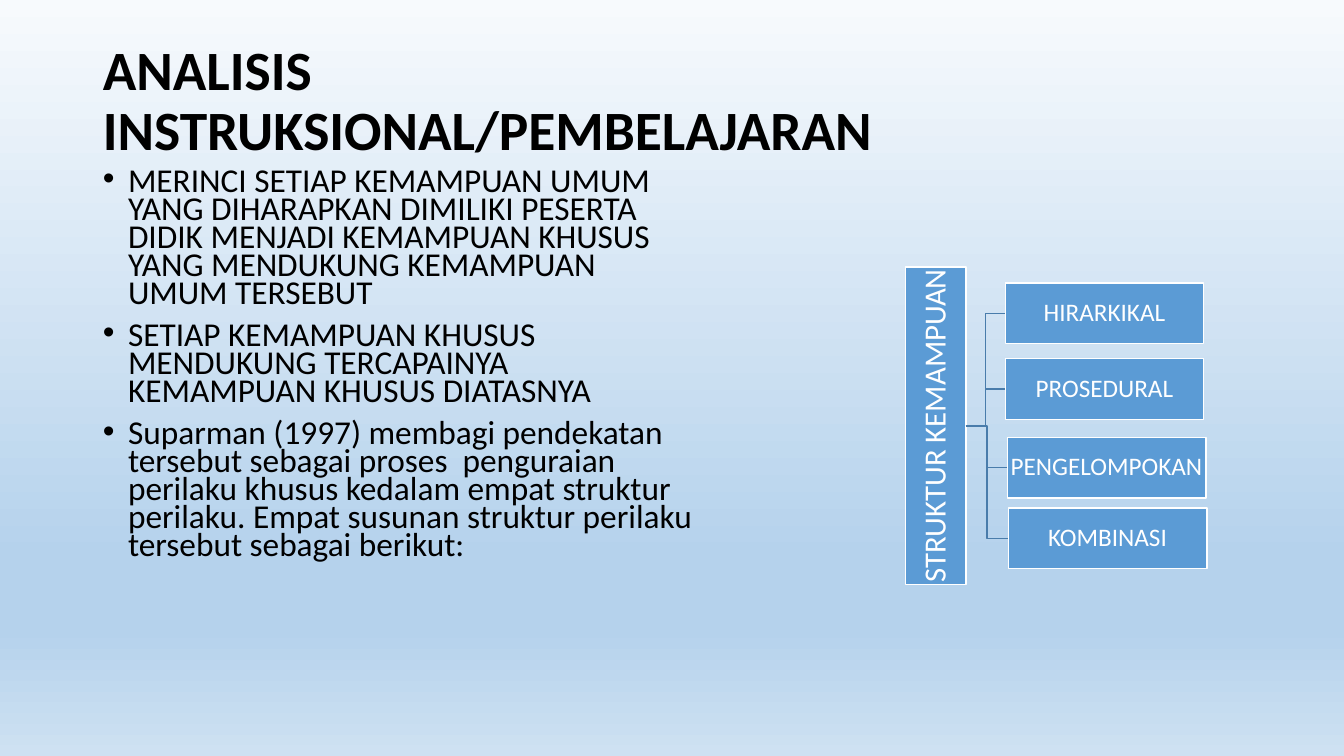
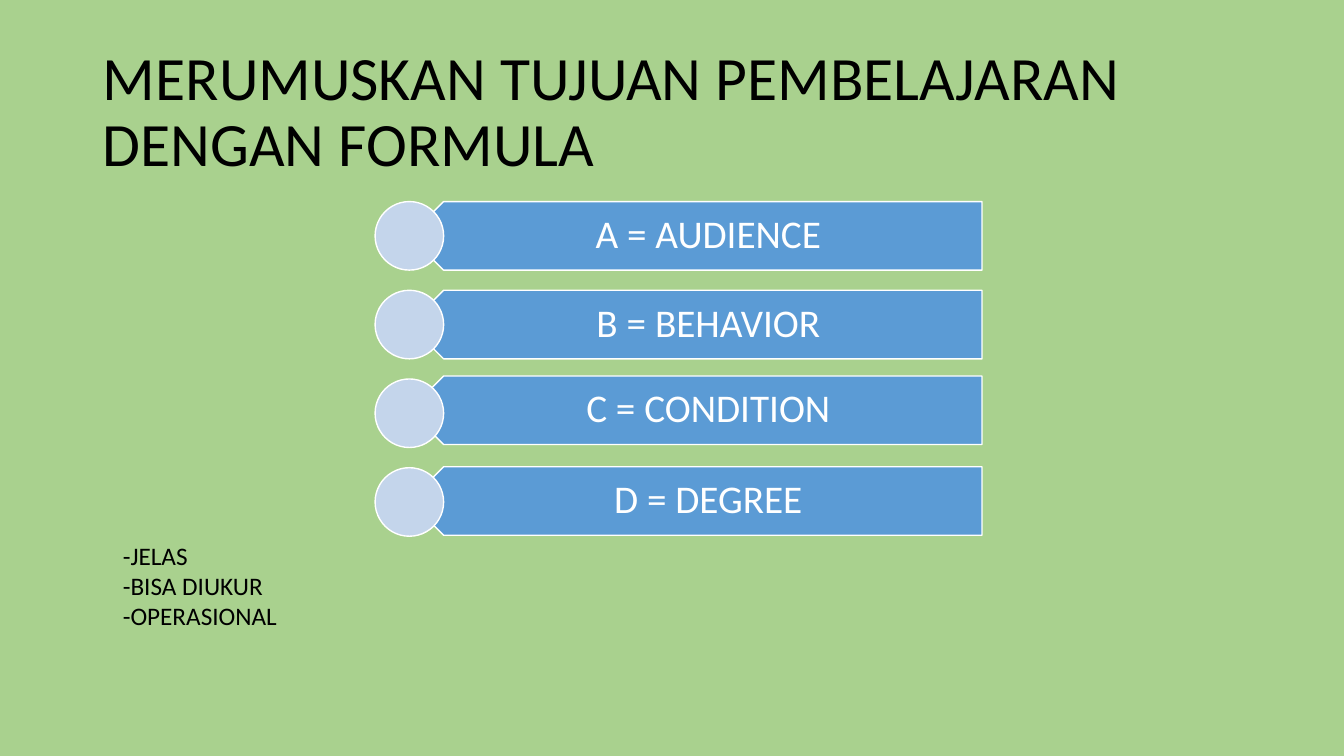
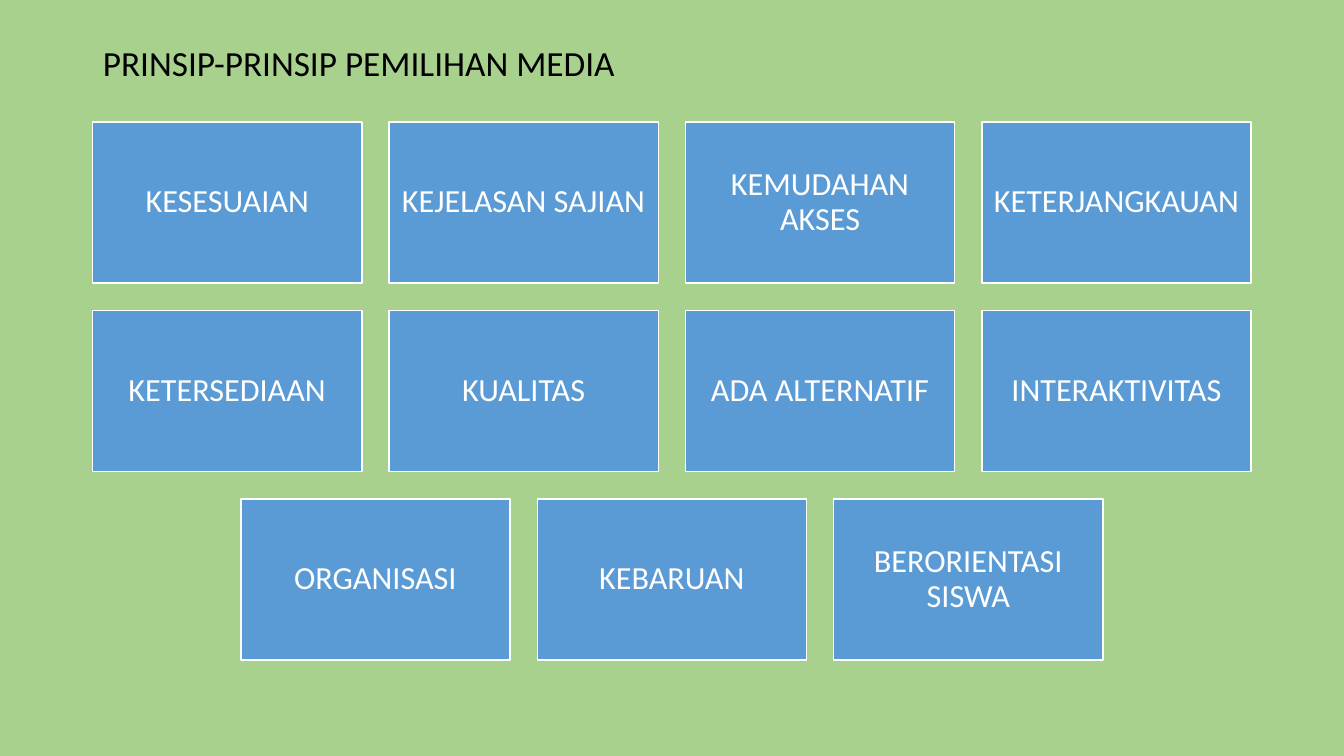
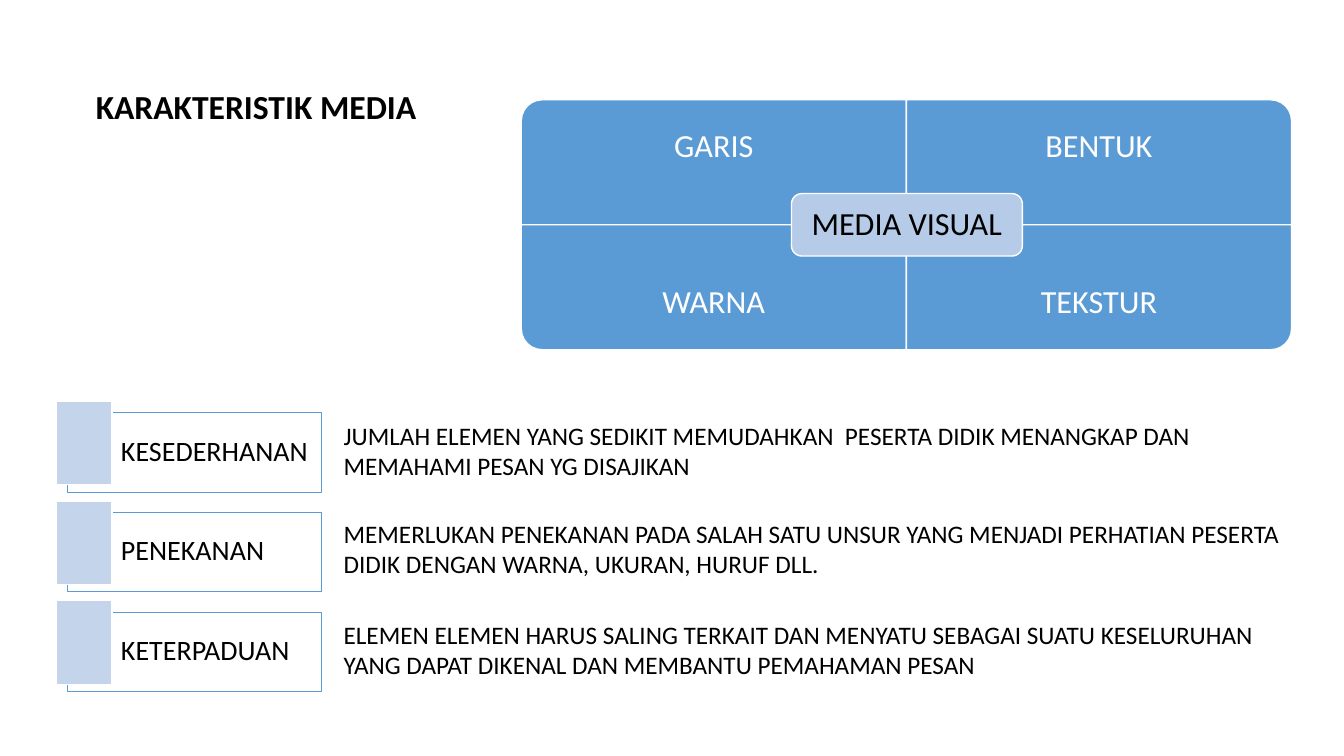
from copy import deepcopy

from lxml.etree import SubElement
from pptx import Presentation
from pptx.dml.color import RGBColor
from pptx.enum.shapes import MSO_CONNECTOR as CONNECTOR, MSO_SHAPE as SHAPE
from pptx.enum.text import MSO_ANCHOR as ANCHOR, MSO_AUTO_SIZE as AUTO_SIZE, PP_ALIGN as ALIGN
from pptx.oxml.ns import qn
from pptx.util import Inches, Pt

FONT = "Calibri"
BLACK = RGBColor(0x00, 0x00, 0x00)
WHITE = RGBColor(0xFF, 0xFF, 0xFF)
BLUE = RGBColor(0x5B, 0x9B, 0xD5)
PALE_BLUE = RGBColor(0xC4, 0xD5, 0xEB)
CENTER_BLUE = RGBColor(0xB5, 0xCB, 0xE7)
BRANCH_BLUE = RGBColor(0x49, 0x7C, 0xAB)
GREEN = RGBColor(0xA9, 0xD1, 0x8E)
SKY_STOPS = [
    (0, RGBColor(0xF7, 0xFA, 0xFD)),
    (0.74, RGBColor(0xB5, 0xD2, 0xEC)),
    (0.83, RGBColor(0xB5, 0xD2, 0xEC)),
    (1, RGBColor(0xCE, 0xE1, 0xF2)),
]
SLIDE_WIDTH, SLIDE_HEIGHT = 13.33, 7.5
CONTENT_LAYOUT, TITLE_LAYOUT = 1, 5


def place(item, left, top, width, height):
    item.left, item.top = Inches(left), Inches(top)
    item.width, item.height = Inches(width), Inches(height)


def format_text(frame, size, color, align=ALIGN.LEFT, spacing=0.9, bold=False):
    for paragraph in frame.paragraphs:
        paragraph.alignment = align
        paragraph.line_spacing = spacing
        for run in paragraph.runs:
            run.font.name = FONT
            run.font.size = Pt(size)
            run.font.bold = bold
            run.font.color.rgb = color


def set_insets(frame, left, top, right, bottom):
    frame.margin_left, frame.margin_top = Inches(left), Inches(top)
    frame.margin_right, frame.margin_bottom = Inches(right), Inches(bottom)


def new_slide(deck, layout, title, box, size, background, bold=False):
    slide = deck.slides.add_slide(deck.slide_layouts[layout])
    if background is None:
        paint_sky(slide)
    else:
        slide.background.fill.solid()
        slide.background.fill.fore_color.rgb = background
    heading = slide.shapes.title
    place(heading, *box)
    frame = heading.text_frame
    frame.text = title
    frame.auto_size = AUTO_SIZE.NONE
    frame.vertical_anchor = ANCHOR.MIDDLE
    format_text(frame, size, BLACK, bold=bold)
    return slide


def paint_sky(slide):
    fill = slide.background.fill
    fill.gradient()
    fill.gradient_angle = 270
    stops = slide.element.find(".//" + qn("a:gsLst"))
    while len(stops) < len(SKY_STOPS):
        stops.append(deepcopy(stops[0]))
    for stop, (position, color) in zip(fill.gradient_stops, SKY_STOPS):
        stop.position = position
        stop.color.rgb = color


def add_bullets(slide, items, box, size):
    body = slide.placeholders[1]
    place(body, *box)
    frame = body.text_frame
    frame.text = "\n".join(items)
    frame.auto_size = AUTO_SIZE.NONE
    format_text(frame, size, BLACK, spacing=0.7)
    for paragraph in frame.paragraphs:
        paragraph.space_before = Pt(10)
        properties = paragraph._p.get_or_add_pPr()
        properties.set("marL", str(Inches(0.25)))
        properties.set("indent", str(Inches(-0.25)))


def add_block(slide, kind, box, fill=BLUE, line=WHITE, weight=1, text="", size=23,
              color=WHITE, align=ALIGN.CENTER, insets=(0.1, 0.1, 0.1, 0.1)):
    block = slide.shapes.add_shape(kind, *map(Inches, box))
    block.shadow.inherit = False
    block.fill.solid()
    block.fill.fore_color.rgb = fill
    block.line.color.rgb = line
    block.line.width = Pt(weight)
    if text:
        frame = block.text_frame
        frame.text = text
        frame.word_wrap = True
        frame.vertical_anchor = ANCHOR.MIDDLE
        set_insets(frame, *insets)
        format_text(frame, size, color, align)
    return block


def mirror(block, *axes):
    for axis in axes:
        block.element.spPr.find(qn("a:xfrm")).set(axis, "1")


def add_label(slide, text, box, size, color):
    label = slide.shapes.add_textbox(*map(Inches, box))
    frame = label.text_frame
    frame.text = text
    frame.word_wrap = True
    frame.vertical_anchor = ANCHOR.MIDDLE
    format_text(frame, size, color, ALIGN.CENTER)


def add_lines(slide, lines, box):
    note = slide.shapes.add_textbox(*map(Inches, box))
    frame = note.text_frame
    frame.text = "\n".join(lines)
    frame.word_wrap = False
    frame.auto_size = AUTO_SIZE.SHAPE_TO_FIT_TEXT
    format_text(frame, 18, BLACK, spacing=1)


def add_branch(slide, root, leaf):
    branch = slide.shapes.add_connector(CONNECTOR.ELBOW, 0, 0, 0, 0)
    branch.begin_connect(root, 3)
    branch.end_connect(leaf, 1)
    branch.line.color.rgb = BRANCH_BLUE
    branch.line.width = Pt(1)
    SubElement(branch.element.spPr, qn("a:effectLst"))


def build_analysis(deck):
    slide = new_slide(deck, CONTENT_LAYOUT, "ANALISIS INSTRUKSIONAL/PEMBELAJARAN",
                      (0.92, 0.4, 9.54, 1.24), 39.6, None, bold=True)
    add_bullets(slide, [
        "MERINCI SETIAP KEMAMPUAN UMUM YANG DIHARAPKAN DIMILIKI PESERTA DIDIK "
        "MENJADI KEMAMPUAN KHUSUS YANG MENDUKUNG KEMAMPUAN UMUM TERSEBUT",
        "SETIAP KEMAMPUAN KHUSUS MENDUKUNG TERCAPAINYA KEMAMPUAN KHUSUS DIATASNYA",
        "Suparman (1997) membagi pendekatan tersebut sebagai proses  penguraian perilaku "
        "khusus kedalam empat struktur perilaku. Empat susunan struktur perilaku tersebut "
        "sebagai berikut:",
    ], (0.92, 1.64, 6.12, 4.38), 23.8)

    tight = (0.01, 0.01, 0.01, 0.01)
    root = add_block(slide, SHAPE.RECTANGLE, (8.98, 2.65, 0.6, 3.15),
                     text="STRUKTUR KEMAMPUAN", size=22, insets=tight)
    root.text_frame._txBody.bodyPr.set("vert", "vert270")
    structures = [("HIRARKIKAL", 9.97, 2.81), ("PROSEDURAL", 9.97, 3.56),
                  ("PENGELOMPOKAN", 9.99, 4.34), ("KOMBINASI", 10, 5.04)]
    for name, left, top in structures:
        leaf = add_block(slide, SHAPE.RECTANGLE, (left, top, 1.97, 0.6),
                         text=name, size=18, insets=tight)
        add_branch(slide, root, leaf)


def build_formula(deck):
    slide = new_slide(deck, TITLE_LAYOUT, "MERUMUSKAN TUJUAN PEMBELAJARAN DENGAN FORMULA",
                      (0.92, 0.4, 11.5, 1.45), 44, GREEN)
    parts = [("A = AUDIENCE", 2), ("B = BEHAVIOR", 2.88),
             ("C = CONDITION", 3.73), ("D = DEGREE", 4.63)]
    for row, (part, top) in enumerate(parts):
        bar = add_block(slide, SHAPE.PENTAGON, (4.06, top, 5.68, 0.68),
                        text=part, size=28, insets=(0.3, 0.12, 0.22, 0.12))
        mirror(bar, "flipH")
        add_block(slide, SHAPE.OVAL, (3.72, 2 + row * 0.88, 0.68, 0.68), PALE_BLUE)
    add_lines(slide, ["-JELAS", "-BISA DIUKUR", "-OPERASIONAL"], (1.12, 5.31, 1.74, 1.01))


def build_principles(deck):
    slide = new_slide(deck, TITLE_LAYOUT, "PRINSIP-PRINSIP PEMILIHAN MEDIA",
                      (0.92, 0.4, 5.88, 0.5), 25.2, GREEN)
    rows = [
        ["KESESUAIAN", "KEJELASAN SAJIAN", "KEMUDAHAN AKSES", "KETERJANGKAUAN"],
        ["KETERSEDIAAN", "KUALITAS", "ADA ALTERNATIF", "INTERAKTIVITAS"],
        ["ORGANISASI", "KEBARUAN", "BERORIENTASI SISWA"],
    ]
    width, height, gap = 2.67, 1.6, 0.27
    for row, principles in enumerate(rows):
        row_width = len(principles) * (width + gap) - gap
        start = (SLIDE_WIDTH - row_width) / 2
        for column, principle in enumerate(principles):
            box = (start + column * (width + gap), 1.21 + row * (height + gap), width, height)
            add_block(slide, SHAPE.RECTANGLE, box, text=principle)


def build_characteristics(deck):
    slide = new_slide(deck, TITLE_LAYOUT, "KARAKTERISTIK MEDIA",
                      (0.85, 0.35, 3.59, 1.45), 24, WHITE, bold=True)
    left, top, width, height = 5.17, 0.99, 3.82, 1.24
    label_height = 0.93
    quarters = [("GARIS", 0, 0, ["flipH"]), ("BENTUK", 1, 0, []),
                ("WARNA", 0, 1, ["flipH", "flipV"]), ("TEKSTUR", 1, 1, ["flipV"])]
    for element, column, row, flips in quarters:
        x, y = left + column * width, top + row * height
        quarter = add_block(slide, SHAPE.ROUND_1_RECTANGLE, (x, y, width, height))
        mirror(quarter, *flips)
        label_top = y + row * (height - label_height)
        add_label(slide, element, (x, label_top, width, label_height), 23, WHITE)
    add_block(slide, SHAPE.ROUNDED_RECTANGLE, (7.85, 1.92, 2.29, 0.62), CENTER_BLUE,
              text="MEDIA VISUAL", color=BLACK)

    traits = [
        ("KESEDERHANAN", 4.12, 8.68,
         ["JUMLAH ELEMEN YANG SEDIKIT MEMUDAHKAN  PESERTA DIDIK MENANGKAP DAN",
          "MEMAHAMI PESAN YG DISAJIKAN"]),
        ("PENEKANAN", 5.09, 9.56,
         ["MEMERLUKAN PENEKANAN PADA SALAH SATU UNSUR YANG MENJADI PERHATIAN PESERTA",
          "DIDIK DENGAN WARNA, UKURAN, HURUF DLL."]),
        ("KETERPADUAN", 6.09, 9.3,
         ["ELEMEN ELEMEN HARUS SALING TERKAIT DAN MENYATU SEBAGAI SUATU KESELURUHAN",
          "YANG DAPAT DIKENAL DAN MEMBANTU PEMAHAMAN PESAN"]),
    ]
    for row, (trait, lines_top, lines_width, lines) in enumerate(traits):
        offset = row * 0.99
        card = add_block(slide, SHAPE.RECTANGLE, (0.67, 4.09 + offset, 2.52, 0.79),
                         WHITE, BLUE, 0.5, trait, 20, BLACK, ALIGN.LEFT,
                         (0.53, 0.08, 0.08, 0.08))
        card_color = card.element.spPr.find(qn("a:solidFill"))[0]
        SubElement(card_color, qn("a:alpha")).set("val", "40000")
        add_block(slide, SHAPE.RECTANGLE, (0.56, 3.98 + offset, 0.55, 0.83), PALE_BLUE)
        add_lines(slide, lines, (3.31, lines_top, lines_width, 0.71))


def main():
    deck = Presentation()
    deck.slide_width, deck.slide_height = Inches(SLIDE_WIDTH), Inches(SLIDE_HEIGHT)
    build_analysis(deck)
    build_formula(deck)
    build_principles(deck)
    build_characteristics(deck)
    deck.save("out.pptx")


if __name__ == "__main__":
    main()
